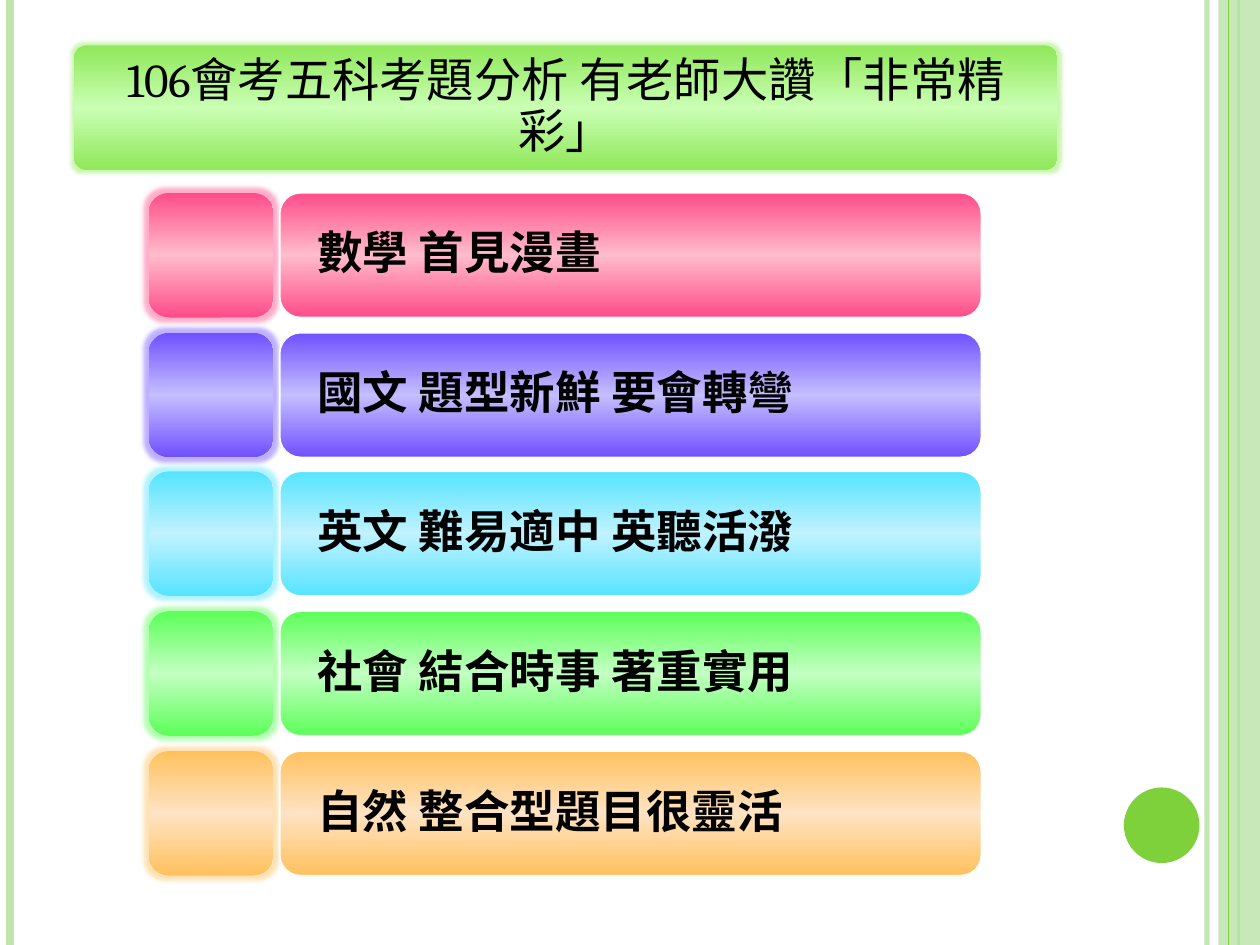
from copy import deepcopy
from typing import NamedTuple

from lxml import etree
from pptx import Presentation
from pptx import util as u
from pptx.dml.color import RGBColor
from pptx.enum import shapes, text
from pptx.oxml.ns import qn

PX = 9144  # EMU per px, 100 px to the inch
W, H = 1000, 750
FONT = "Cambria"
GREEN, PALE_GREEN = "7FD13B", "C0E5AF"


class Stripe(NamedTuple):
    x: int
    color: str
    weight: float
    alpha: int = 100


class Subject(NamedTuple):
    label: str
    edge: str
    middle: str


SUBJECTS = [
    Subject("數學 首見漫畫", "FF4C89", "FFBCCC"),
    Subject("國文 題型新鮮 要會轉彎", "7050FF", "C5BEFF"),
    Subject("英文 難易適中 英聽活潑", "55E4FF", "C0F2FF"),
    Subject("社會 結合時事 著重實用", "5CFF59", "C3FFC2"),
    Subject("自然 整合型題目很靈活", "FFC15D", "FFE3C4"),
]
TOP, PITCH, SIZE = 153, 110.75, 99


def px(n: float) -> int:
    return round(n) * PX


def rgb(color: str) -> RGBColor:
    return RGBColor.from_string(color)


def set_alpha(sp, percent: int) -> None:
    for clr in sp._element.spPr.iter(qn("a:srgbClr")):
        etree.SubElement(clr, qn("a:alpha"), val=str(percent * 1000))


def add_stripe(s, stripe: Stripe) -> None:
    sp = s.shapes.add_connector(
        shapes.MSO_CONNECTOR.STRAIGHT, px(stripe.x), 0, px(stripe.x), px(H))
    sp.line.color.rgb = rgb(stripe.color)
    sp.line.width = u.Pt(stripe.weight)
    if stripe.alpha < 100:
        set_alpha(sp, stripe.alpha)
    etree.SubElement(sp._element.spPr, qn("a:effectLst"))


def add_box(s, kind, x: float, y: float, w: float, h: float):
    sp = s.shapes.add_shape(kind, px(x), px(y), px(w), px(h))
    sp.shadow.inherit = False
    sp.line.fill.background()
    return sp


def add_solid(s, kind, x: int, y: int, w: int, h: int, color: str):
    sp = add_box(s, kind, x, y, w, h)
    sp.fill.solid()
    sp.fill.fore_color.rgb = rgb(color)
    return sp


def add_shiny(s, x: float, y: float, w: float, h: float,
              edge: str, middle: str, radius: float):
    """Add a rounded box whose vertical gradient is lightest half way down."""
    sp = add_box(s, shapes.MSO_SHAPE.ROUNDED_RECTANGLE, x, y, w, h)
    sp.adjustments[0] = radius
    sp.fill.gradient()
    sp.fill.gradient_angle = 90
    first = sp._element.spPr.find(".//" + qn("a:gs"))
    first.addnext(deepcopy(first))
    for stop, pos, color in zip(sp.fill.gradient_stops, (0, 0.5, 1),
                                (edge, middle, edge)):
        stop.position = pos
        stop.color.rgb = rgb(color)
    return sp


def add_glow(sp, color: str) -> None:
    effects = sp._element.spPr.find(qn("a:effectLst"))
    glow = etree.SubElement(effects, qn("a:glow"), rad=str(u.Pt(5)))
    clr = etree.SubElement(glow, qn("a:srgbClr"), val=color)
    etree.SubElement(clr, qn("a:alpha"), val="45000")


def write(sp, words: str, size: int, bold: bool, align,
          inset_x: int, inset_y: int) -> None:
    tf = sp.text_frame
    tf.text = words
    tf.word_wrap = True
    tf.auto_size = text.MSO_AUTO_SIZE.NONE
    tf.vertical_anchor = text.MSO_ANCHOR.MIDDLE
    tf.margin_left = tf.margin_right = px(inset_x)
    tf.margin_top = tf.margin_bottom = px(inset_y)
    p = tf.paragraphs[0]
    p.alignment = align
    p.line_spacing = 0.9
    p.space_before = u.Pt(0)
    f = p.runs[0].font
    f.name, f.size, f.bold = FONT, u.Pt(size), bold
    f.color.rgb = rgb("000000")


def add_frame(s) -> None:
    add_stripe(s, Stripe(958, PALE_GREEN, 3, 93))
    add_stripe(s, Stripe(8, PALE_GREEN, 4.5))
    add_stripe(s, Stripe(983, GREEN, 1.5))
    band = add_solid(s, shapes.MSO_SHAPE.RECTANGLE, 967, 0, 33, H, PALE_GREEN)
    set_alpha(band, 87)
    add_stripe(s, Stripe(975, GREEN, 0.75))
    add_solid(s, shapes.MSO_SHAPE.OVAL, 892, 625, 60, 60, GREEN)


def add_title(s) -> None:
    bar = add_shiny(s, 59, 36, 780, 99, "8FE759", "CAFFB4", 0.1)
    add_glow(bar, "8FE759")
    title = s.shapes.title
    s.shapes._spTree.append(title._element)  # in front of its bar
    title.left, title.top, title.width, title.height = map(px, (62, 39, 774, 93))
    write(title, "106會考五科考題分析 有老師大讚「非常精彩」", 27, False,
          text.PP_ALIGN.CENTER, 6, 4)


def add_subject(s, subject: Subject, y: float) -> None:
    colors = subject.edge, subject.middle
    tile = add_shiny(s, 118, y, SIZE, SIZE, *colors, 0.167)
    add_glow(tile, subject.edge)
    bar = add_shiny(s, 222, y, 557, SIZE, *colors, 0.167)
    bar.line.color.rgb = rgb("FFFFFF")
    bar.line.width = u.Pt(1)
    write(bar, subject.label, 26, True, text.PP_ALIGN.LEFT, 25, 25)


def main() -> None:
    prs = Presentation()
    prs.slide_width, prs.slide_height = px(W), px(H)
    s = prs.slides.add_slide(prs.slide_layouts[5])
    add_frame(s)
    add_title(s)
    for i, subject in enumerate(SUBJECTS):
        add_subject(s, subject, TOP + i * PITCH)
    prs.save("out.pptx")


if __name__ == "__main__":
    main()
